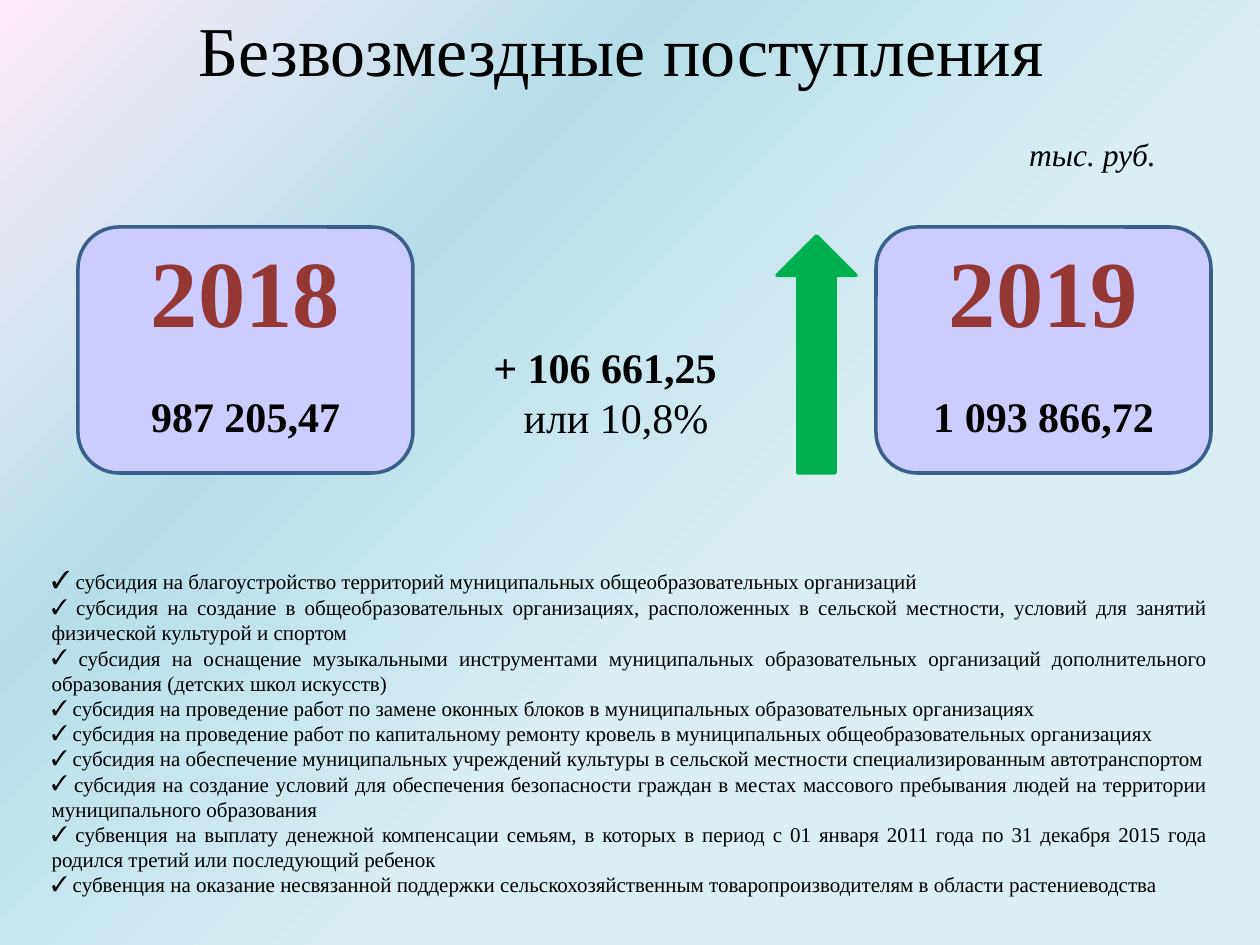
"""Build the slide comparing grant receipts for 2018 and 2019."""
from lxml.etree import SubElement
from pptx import Presentation
from pptx.dml.color import RGBColor
from pptx.enum.shapes import MSO_SHAPE
from pptx.enum.text import MSO_ANCHOR, MSO_AUTO_SIZE, PP_ALIGN
from pptx.oxml import parse_xml
from pptx.oxml.ns import nsdecls, qn
from pptx.util import Pt

PIXEL = 914400 / 126
BLACK = RGBColor(0x00, 0x00, 0x00)
LAVENDER = RGBColor(0xCC, 0xCC, 0xFF)
NAVY = RGBColor(0x3A, 0x5F, 0x8C)
GREEN = RGBColor(0x00, 0xB0, 0x50)
MAROON = RGBColor(0x95, 0x37, 0x35)
PEACH = RGBColor(0xFA, 0xC0, 0x90)
ICE = RGBColor(0xDB, 0xEE, 0xF4)
AQUA = RGBColor(0xB7, 0xDE, 0xE8)
PINK = RGBColor(0xFF, 0xEB, 0xFA)

GRADIENT_STOPS = [(0, ICE), (40, ICE), (70, AQUA), (100, PINK)]
CARDS = [(78, "2018", "987 205,47"), (876, "2019", "1 093 866,72")]
GRANTS = [
    "субсидия на благоустройство территорий муниципальных общеобразовательных организаций",
    "субсидия на создание в общеобразовательных организациях, расположенных в сельской местности, "
    "условий для занятий физической культурой и спортом",
    "субсидия на оснащение музыкальными инструментами муниципальных образовательных организаций "
    "дополнительного образования (детских школ искусств)",
    "субсидия на проведение работ по замене оконных блоков в муниципальных образовательных организациях",
    "субсидия на проведение работ по капитальному ремонту кровель в муниципальных "
    "общеобразовательных организациях",
    "субсидия на обеспечение муниципальных учреждений культуры в сельской местности "
    "специализированным автотранспортом",
    "субсидия на создание условий для обеспечения безопасности граждан в местах массового "
    "пребывания людей на территории муниципального образования",
    "субвенция на выплату денежной компенсации семьям, в которых в период с 01 января 2011 года "
    "по 31 декабря 2015 года родился третий или последующий ребенок",
    "субвенция на оказание несвязанной поддержки сельскохозяйственным товаропроизводителям "
    "в области растениеводства",
]


def box(left, top, width, height):
    return [round(value * PIXEL) for value in (left, top, width, height)]


def add_run(paragraph, text, size, color=BLACK, bold=False, italic=False, name="Times New Roman"):
    run = paragraph.add_run()
    run.text = text
    run.font.name = name
    run.font.size = Pt(size)
    run.font.bold = bold
    run.font.italic = italic
    run.font.color.rgb = color
    return run


presentation = Presentation()
presentation.slide_width, presentation.slide_height = box(0, 0, 1260, 945)[2:]
slide = presentation.slides.add_slide(presentation.slide_layouts[1])

slide.background.fill.gradient()
gradient = slide.element.find(".//" + qn("a:gradFill"))
stops = "".join(
    f'<a:gs pos="{position * 1000}"><a:srgbClr val="{color}"/></a:gs>'
    for position, color in GRADIENT_STOPS
)
gradient.getparent().replace(gradient, parse_xml(
    f'<a:gradFill {nsdecls("a")} rotWithShape="1"><a:gsLst>{stops}</a:gsLst>'
    '<a:path path="circle"><a:fillToRect l="100000" t="100000"/></a:path></a:gradFill>'
))

title, grant_list = slide.placeholders
for placeholder, top, height in [(title, 0, 100), (grant_list, 559, 386)]:
    placeholder.left, placeholder.top, placeholder.width, placeholder.height = box(39, top, 1182, height)
    placeholder.text_frame.vertical_anchor = MSO_ANCHOR.TOP
    placeholder.text_frame.auto_size = MSO_AUTO_SIZE.NONE
    placeholder.text_frame.word_wrap = True

title_paragraph = title.text_frame.paragraphs[0]
title_paragraph.alignment = PP_ALIGN.CENTER
add_run(title_paragraph, "Безвозмездные поступления ", 40)

for index, grant in enumerate(GRANTS):
    frame = grant_list.text_frame
    paragraph = frame.paragraphs[0] if index == 0 else frame.add_paragraph()
    paragraph.alignment = PP_ALIGN.JUSTIFY
    paragraph.space_before = Pt(0)
    properties = paragraph._p.get_or_add_pPr()
    properties.set("marL", "0")
    properties.set("indent", "0")
    SubElement(properties, qn("a:buFont")).set("typeface", "Times New Roman")
    SubElement(properties, qn("a:buChar")).set("char", "✓")
    if index < 2:
        add_run(paragraph, " ", 14 if index == 0 else 12, name="Calibri")
        add_run(paragraph, grant, 12)
    else:
        add_run(paragraph, " " + grant, 12)

for left, year, amount in CARDS:
    card = slide.shapes.add_shape(MSO_SHAPE.ROUNDED_RECTANGLE, *box(left, 227, 335, 246))
    card.shadow.inherit = False
    card.fill.solid()
    card.fill.fore_color.rgb = LAVENDER
    card.line.color.rgb = NAVY
    card.line.width = Pt(2)

    year_box = slide.shapes.add_textbox(*box(left + 59, 227, 217, 127))
    year_box.text_frame.word_wrap = False
    year_paragraph = year_box.text_frame.paragraphs[0]
    year_paragraph.alignment = PP_ALIGN.CENTER
    year_run = add_run(year_paragraph, year, 54, MAROON, bold=True)
    year_run._r.get_or_add_rPr().insert(0, parse_xml(
        f'<a:ln {nsdecls("a")} w="12700"><a:solidFill><a:srgbClr val="{PEACH}"/></a:solidFill></a:ln>'
    ))

    amount_box = slide.shapes.add_textbox(*box(left, 384, 335, 63))
    amount_box.text_frame.word_wrap = True
    amount_paragraph = amount_box.text_frame.paragraphs[0]
    amount_paragraph.alignment = PP_ALIGN.CENTER
    add_run(amount_paragraph, amount, 24, bold=True)

change_box = slide.shapes.add_textbox(*box(462, 335, 286, 115))
change_box.text_frame.word_wrap = True
change_paragraph = change_box.text_frame.paragraphs[0]
change_paragraph.alignment = PP_ALIGN.CENTER
add_run(change_paragraph, "+ 106 661,25", 24, bold=True)
percent_paragraph = change_box.text_frame.add_paragraph()
percent_paragraph.alignment = PP_ALIGN.CENTER
percent_paragraph._p.get_or_add_pPr().set("marL", str(round(22 * PIXEL)))
add_run(percent_paragraph, "или 10,8%", 24)

arrow = slide.shapes.add_shape(MSO_SHAPE.UP_ARROW, *box(777, 236, 79, 237))
arrow.adjustments[0] = 0.47
arrow.adjustments[1] = 0.5
arrow.shadow.inherit = False
arrow.fill.solid()
arrow.fill.fore_color.rgb = GREEN
arrow.line.color.rgb = GREEN
arrow.line.width = Pt(2)

unit_box = slide.shapes.add_textbox(*box(974, 129, 237, 50))
unit_box.text_frame.word_wrap = True
unit_paragraph = unit_box.text_frame.paragraphs[0]
unit_paragraph.alignment = PP_ALIGN.CENTER
add_run(unit_paragraph, "тыс. руб.", 18, italic=True)

presentation.save("out.pptx")
